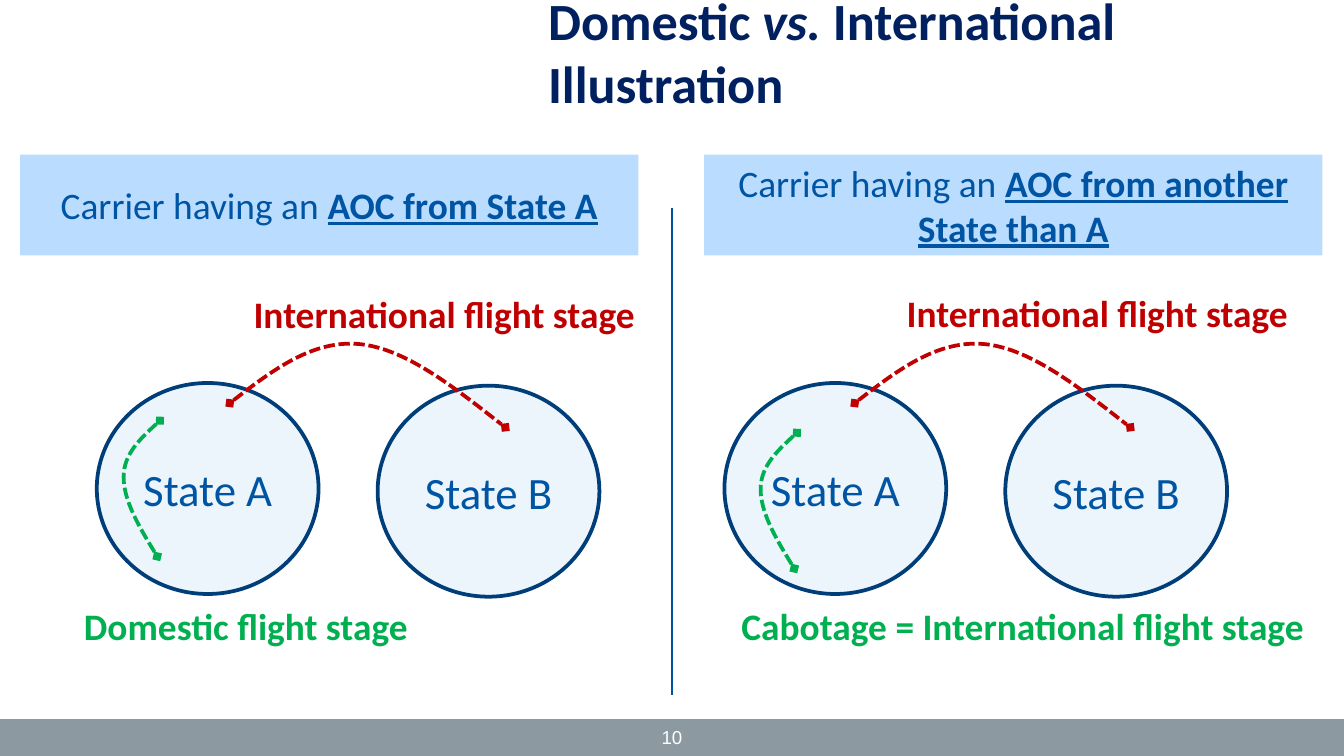
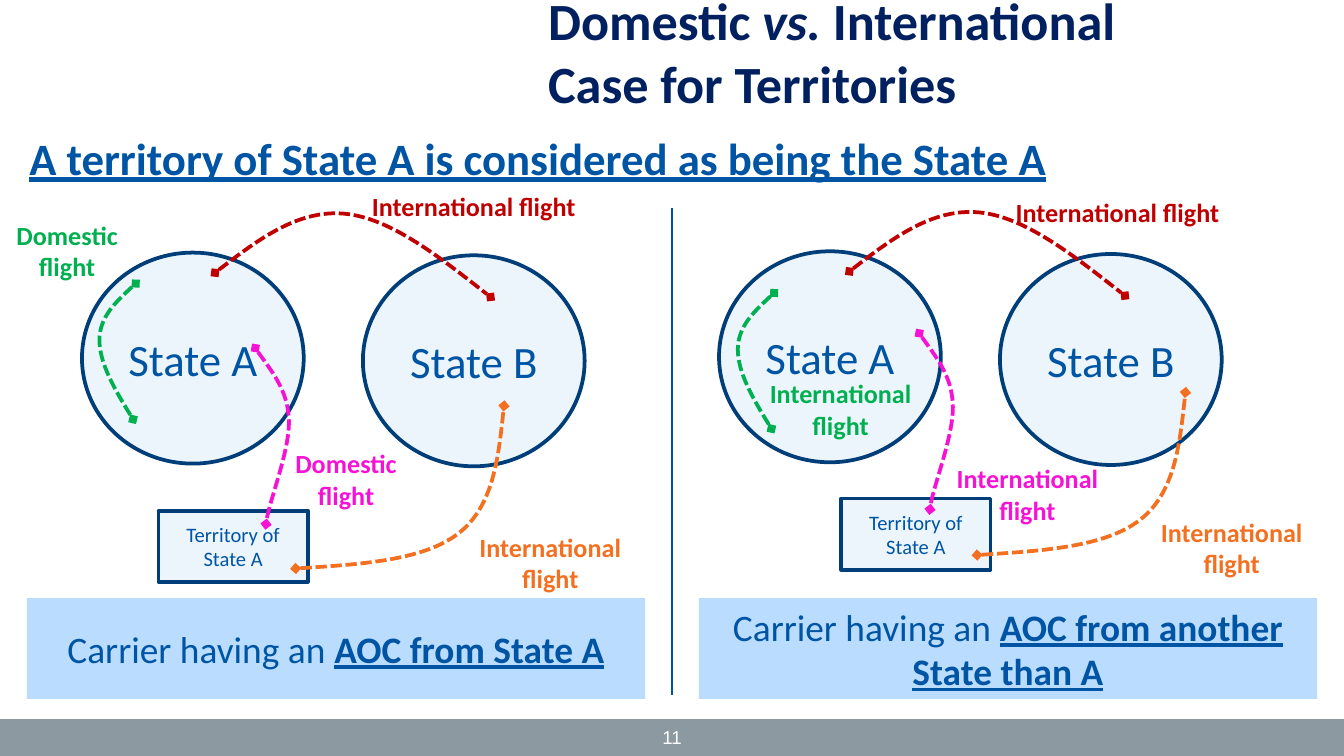
from dataclasses import dataclass
from typing import Any

from lxml.etree import SubElement
from pptx import Presentation
from pptx.dml.color import RGBColor
from pptx.enum.dml import MSO_LINE
from pptx.enum.shapes import MSO_CONNECTOR, MSO_SHAPE
from pptx.enum.text import MSO_ANCHOR, PP_ALIGN
from pptx.oxml.ns import qn
from pptx.util import Inches, Pt

NAVY, BLUE, EDGE, RULE = "002060", "0054A4", "003E79", "0052A0"
SKY, PALE, GREY, WHITE = "BADDFF", "ECF5FC", "8C99A1", "FFFFFF"
RED, GREEN, PINK, ORANGE = "C00000", "00B050", "F612D5", "F37021"

BOLD = {"bold": True}
STRONG = {"bold": True, "underline": True}
HOME_AOC = "AOC from State A"
AWAY_AOC = "AOC from another State than A"

Point = tuple[float, float]
Box = tuple[float, float, float, float]
Run = tuple[str, dict[str, Any]]

# Bezier points of each route, measured from its start
ARC = ((0.31, -0.24), (0.62, -0.47), (0.96, -0.44),
       (1.3, -0.41), (1.68, -0.11), (2.05, 0.18))
HOOK = ((-0.13, 0.12), (-0.27, 0.25), (-0.27, 0.42),
        (-0.27, 0.59), (-0.15, 0.8), (-0.02, 1.01))
DIP = ((0.11, 0.16), (0.24, 0.31), (0.25, 0.53),
       (0.26, 0.75), (0.09, 1.17), (0.08, 1.31))
SWEEP = ((0.47, -0.03), (0.95, -0.06), (1.21, -0.26),
         (1.47, -0.46), (1.51, -0.84), (1.55, -1.21))


@dataclass
class Route:
    start: Point
    bends: tuple[Point, ...]
    hue: str
    label: str
    box: Box


@dataclass
class Panel:
    aoc: str
    head: Point
    state: Point
    routes: list[Route]
    land: Point | None = None


def paint(hue: str) -> RGBColor:
    return RGBColor.from_string(hue)


def write(shape, lines: list[list[Run]], size: float, hue: str,
          align=PP_ALIGN.CENTER, anchor=MSO_ANCHOR.MIDDLE, face: str = "Calibri") -> None:
    frame = shape.text_frame
    frame.word_wrap = True
    frame.vertical_anchor = anchor
    for i, runs in enumerate(lines):
        para = frame.add_paragraph() if i else frame.paragraphs[0]
        para.alignment = align
        for text, style in runs:
            run = para.add_run()
            run.text = text
            run.font.color.rgb = paint(hue)
            for name, value in ({"name": face, "size": Pt(size)} | style).items():
                setattr(run.font, name, value)


def add_text(slide, box: Box, *args, **kwargs) -> None:
    write(slide.shapes.add_textbox(*map(Inches, box)), *args, **kwargs)


def add_block(slide, box: Box, fill: str, edge: str | None = None,
              kind=MSO_SHAPE.RECTANGLE):
    shape = slide.shapes.add_shape(kind, *map(Inches, box))
    shape.shadow.inherit = False
    shape.fill.solid()
    shape.fill.fore_color.rgb = paint(fill)
    if edge:
        shape.line.color.rgb = paint(edge)
        shape.line.width = Pt(2)
    else:
        shape.line.fill.background()
    return shape


def add_route(slide, route: Route) -> None:
    """Draw a dashed curve with diamond ends, and its label."""
    x, y = route.start
    pen = slide.shapes.build_freeform(Inches(x), Inches(y))
    pen.add_line_segments([(Inches(x + dx), Inches(y + dy)) for dx, dy in route.bends],
                          close=False)
    curve = pen.convert_to_shape()
    curve.shadow.inherit = False
    curve.fill.background()
    curve.line.color.rgb = paint(route.hue)
    curve.line.width = Pt(2)
    curve.line.dash_style = MSO_LINE.SQUARE_DOT
    props = curve.element.spPr
    for end in ("a:headEnd", "a:tailEnd"):
        SubElement(props.find(qn("a:ln")), qn(end), type="diamond")

    # Every three straight segments become one cubic curve
    track = next(props.iter(qn("a:path")))
    steps = track.findall(qn("a:lnTo"))
    for i in range(0, len(steps), 3):
        cubic = SubElement(track, qn("a:cubicBezTo"))
        for step in steps[i:i + 3]:
            cubic.append(step[0])
            track.remove(step)

    size = 20 if route.label.endswith("stage") else 14
    add_text(slide, route.box, [[(route.label, BOLD)]], size, route.hue)


def add_panel(slide, panel: Panel) -> None:
    head = add_block(slide, (*panel.head, 4.6, 0.75), SKY)
    write(head, [[("Carrier having an ", {}), (panel.aoc, STRONG)]], 20, BLUE)
    x, y = panel.state
    for name, dx, dy in (("State A", 0, 0), ("State B", 2.09, 0.02)):
        state = add_block(slide, (x + dx, y + dy, 1.65, 1.57), PALE, EDGE, MSO_SHAPE.OVAL)
        write(state, [[(name, {})]], 24, BLUE)
    if panel.land:
        land = add_block(slide, (*panel.land, 1.11, 0.53), PALE, EDGE)
        write(land, [[("Territory of State A", {})]], 11, BLUE)
    for route in panel.routes:
        add_route(slide, route)


def add_page(deck, number: int, topic: str, panels: list[Panel]):
    slide = deck.slides.add_slide(deck.slide_layouts[6])
    band = (0, 5.35, 10, 0.27)
    add_block(slide, (0, 5.35, 10, 0.28), GREY)
    add_text(slide, band, [[(str(number), {})]], 10, WHITE, face="Arial")
    for panel in panels:
        add_panel(slide, panel)
    rule = slide.shapes.add_connector(MSO_CONNECTOR.STRAIGHT, Inches(5), Inches(1.55),
                                      Inches(5), Inches(5.17))
    rule.line.color.rgb = paint(RULE)
    rule.line.width = Pt(0.75)
    SubElement(rule.element.spPr, qn("a:effectLst"))
    title = [[("Domestic ", BOLD), ("vs. ", BOLD | {"italic": True}),
              ("International", BOLD)], [(topic, BOLD)]]
    add_text(slide, (3.98, -0.04, 6.02, 0.84), title, 28, NAVY, PP_ALIGN.LEFT)
    return slide


STAGE, FLIGHT, LOCAL = "International flight stage", "International flight", "Domestic flight"

STAGES = [
    Panel(HOME_AOC, (0.15, 1.15), (0.72, 2.85), [
        Route((1.71, 3), ARC, RED, STAGE, (1.71, 2.1, 3.19, 0.47)),
        Route((1.19, 3.13), HOOK, GREEN, "Domestic flight stage", (0.15, 4.42, 3.36, 0.47)),
    ]),
    Panel(AWAY_AOC, (5.24, 1.15), (5.39, 2.85), [
        Route((6.36, 3), ARC, RED, STAGE, (6.36, 2.09, 3.61, 0.47)),
        Route((5.93, 3.22), HOOK, GREEN, "Cabotage = International flight stage",
              (5.38, 4.42, 4.46, 0.47)),
    ]),
]

LANDS = [
    Panel(HOME_AOC, (0.2, 4.45), (0.61, 1.88), [
        Route((1.6, 2.03), ARC, RED, FLIGHT, (2.32, 1.3, 2.41, 0.47)),
        Route((1.01, 2.11), HOOK, GREEN, LOCAL, (-0.13, 1.63, 1.26, 0.47)),
        Route((1.9, 2.59), DIP, PINK, LOCAL, (1.94, 3.33, 1.27, 0.47)),
        Route((2.2, 4.23), SWEEP, ORANGE, FLIGHT, (3.46, 3.95, 1.27, 0.47)),
    ], land=(1.18, 3.8)),
    Panel(AWAY_AOC, (5.2, 4.45), (5.35, 1.87), [
        Route((6.32, 2.02), ARC, RED, FLIGHT, (7.01, 1.34, 2.61, 0.47)),
        Route((5.76, 2.18), HOOK, GREEN, FLIGHT, (5.62, 2.81, 1.27, 0.47)),
        Route((6.84, 2.48), DIP, PINK, FLIGHT, (7.01, 3.44, 1.27, 0.47)),
        Route((7.27, 4.13), SWEEP, ORANGE, FLIGHT, (8.53, 3.84, 1.27, 0.47)),
    ], land=(6.26, 3.71)),
]


def main() -> None:
    deck = Presentation()
    deck.slide_width = Inches(10)
    deck.slide_height = Inches(10) * 9 // 16
    add_page(deck, 10, "Illustration", STAGES)
    slide = add_page(deck, 11, "Case for Territories", LANDS)
    claim = "A territory of State A is considered as being the State A"
    add_text(slide, (0.12, 0.92, 9.76, 0.55), [[(claim, STRONG)]], 24, BLUE,
             PP_ALIGN.LEFT, MSO_ANCHOR.TOP)
    deck.save("out.pptx")


if __name__ == "__main__":
    main()
